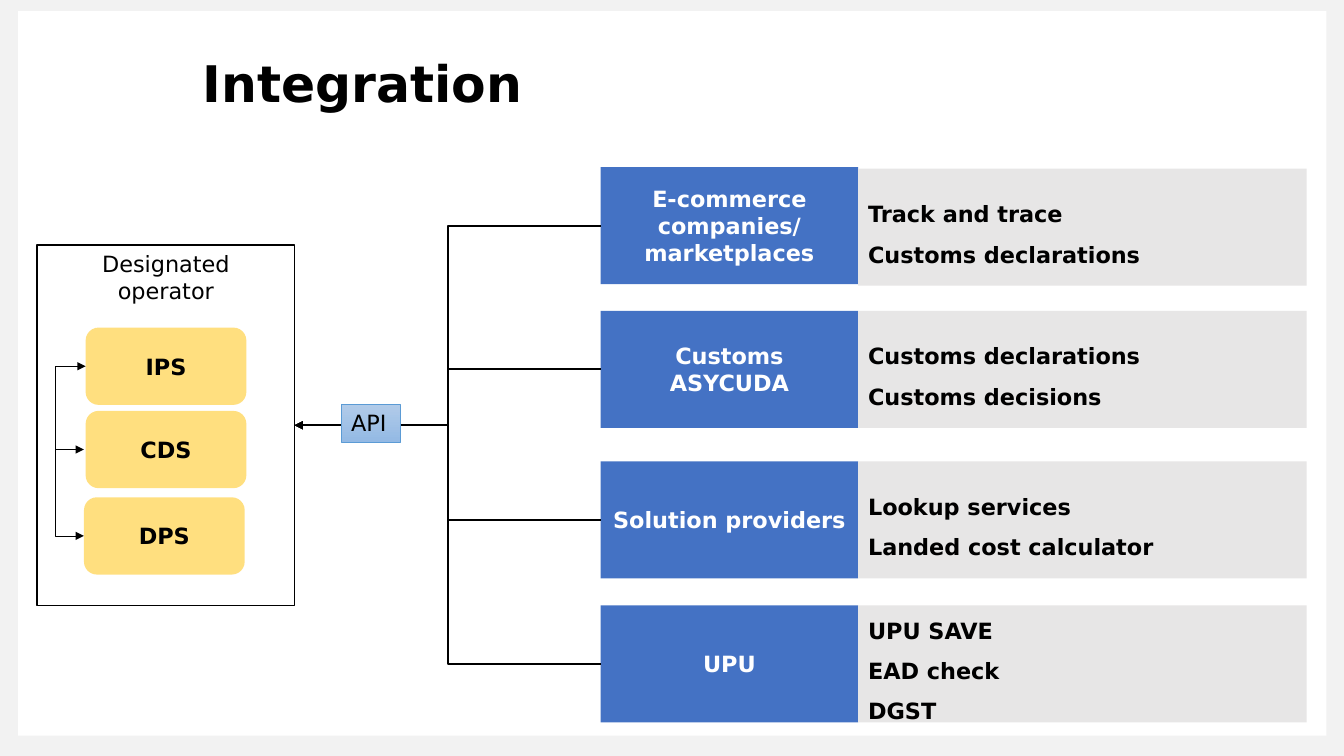
from lxml import etree
from pptx import Presentation
from pptx.dml.color import RGBColor
from pptx.enum import shapes as kinds, text as t
from pptx.oxml import ns
from pptx.util import Pt

BLACK = RGBColor(0x00, 0x00, 0x00)
WHITE = RGBColor(0xFF, 0xFF, 0xFF)
FRAME_GREY = RGBColor(0xF2, 0xF2, 0xF2)
SERVICE_GREY = RGBColor(0xE7, 0xE6, 0xE6)
PARTNER_BLUE = RGBColor(0x44, 0x72, 0xC4)
SYSTEM_AMBER = RGBColor(0xFF, 0xC0, 0x00)
API_LIGHT = RGBColor(0xB1, 0xCB, 0xE9)
API_DARK = RGBColor(0x93, 0xB9, 0xE4)
API_EDGE = RGBColor(0x5B, 0x9B, 0xD5)
FONT = "DejaVu Sans"
RECT = kinds.MSO_SHAPE.RECTANGLE
ELBOW = kinds.MSO_CONNECTOR.ELBOW
CENTER, LEFT = t.PP_ALIGN.CENTER, t.PP_ALIGN.LEFT
LEFT_SITE, RIGHT_SITE = 1, 3

prs = Presentation()
prs.slide_width, prs.slide_height = Pt(960), Pt(540)
slide = prs.slides.add_slide(prs.slide_layouts[5])


def add_box(place, fill, words="", color=BLACK, bold=True, align=CENTER,
            spacing=1.0, kind=RECT):
    """Add a borderless filled shape at (left, top, width, height) points."""
    box = slide.shapes.add_shape(kind, *map(Pt, place))
    box.shadow.inherit = False
    box.fill.solid()
    box.fill.fore_color.rgb = fill
    box.line.fill.background()
    if words:
        frame = box.text_frame
        frame.text = words
        frame.vertical_anchor = t.MSO_ANCHOR.MIDDLE
        for line in frame.paragraphs:
            line.alignment, line.line_spacing = align, spacing
            for run in line.runs:
                run.font.name, run.font.size = FONT, Pt(16)
                run.font.bold, run.font.color.rgb = bold, color
    return box


def add_arrow(kind, ends, width, heads=("tailEnd",)):
    """Add a black connector; ends are x1, y1, x2, y2 in points."""
    arrow = slide.shapes.add_connector(kind, *map(Pt, ends))
    arrow.line.color.rgb = BLACK
    arrow.line.width = Pt(width)
    outline = arrow.line._get_or_add_ln()
    for head in heads:
        etree.SubElement(outline, ns.qn("a:" + head), type="triangle")
    etree.SubElement(arrow._element.spPr, ns.qn("a:effectLst"))
    return arrow


add_box((0, 0, 960, 540), FRAME_GREY)
add_box((13, 8, 934.5, 517.5), WHITE)

# Designated operator and its systems
operator = add_box((26.5, 175, 184, 257.5), WHITE, "Designated\noperator", bold=False)
operator.line.color.rgb = BLACK
operator.line.width = Pt(1)
operator.text_frame.vertical_anchor = t.MSO_ANCHOR.TOP

systems = []
for name, left, top in (("IPS", 61.2, 234), ("CDS", 61.2, 293.5), ("DPS", 60, 355.2)):
    system = add_box((left, top, 114.8, 55.2), SYSTEM_AMBER, name,
                     kind=kinds.MSO_SHAPE.ROUNDED_RECTANGLE)
    amber = system._element.spPr.find(".//" + ns.qn("a:srgbClr"))
    etree.SubElement(amber, ns.qn("a:alpha"), val="50000")
    systems.append(system)

bracket = add_arrow(ELBOW, (61.2, 261.6, 60, 382.8), 0.5, ("headEnd", "tailEnd"))
bracket.begin_connect(systems[0], LEFT_SITE)
bracket.end_connect(systems[2], LEFT_SITE)
# The bend lies 18 connector widths to the left of the start
bend = bracket._element.spPr.find(ns.qn("a:prstGeom")).get_or_add_avLst()
etree.SubElement(bend, ns.qn("a:gd"), name="adj1", fmla="val 1800000")
add_arrow(kinds.MSO_CONNECTOR.STRAIGHT, (39.5, 321.1, 60, 321.1), 0.5)

# Partners, the services each one uses, and their links to the operator
partners = (
    (119.4, 120.5, "E-commerce companies/ marketplaces", "Track and trace\nCustoms declarations"),
    (222, 222, "Customs\nASYCUDA", "Customs declarations\nCustoms decisions"),
    (329.6, 329.6, "Solution providers", "Lookup services\nLanded cost calculator"),
    (432.4, 432.4, "UPU", "UPU SAVE\nEAD check\nDGST"),
)
for top, services_top, name, services in partners:
    partner = add_box((429, top, 184, 83.6), PARTNER_BLUE, name, WHITE)
    add_box((613, services_top, 320.4, 83.6), SERVICE_GREY, services,
            align=LEFT, spacing=1.5)
    link = add_arrow(ELBOW, (429, top + 41.8, 210.5, 303.75), 1.5)
    link.begin_connect(partner, LEFT_SITE)
    link.end_connect(operator, RIGHT_SITE)

api = add_box((243.8, 289, 42.4, 27), API_LIGHT, "API", bold=False, align=LEFT)
api.fill.gradient()
api.fill.gradient_angle = 270
for stop, shade in zip(api.fill.gradient_stops, (API_LIGHT, API_DARK)):
    stop.color.rgb = shade
api.line.color.rgb = API_EDGE
api.line.width = Pt(0.5)
api.text_frame.word_wrap = False
api.text_frame.vertical_anchor = t.MSO_ANCHOR.TOP

# The title goes in front of the white panel
title = slide.shapes.title
slide.shapes._spTree.append(title._element)
title.left, title.top, title.width, title.height = Pt(137.5), Pt(39), Pt(627), Pt(45)
title.text_frame.text = "Integration"
title.text_frame.vertical_anchor = t.MSO_ANCHOR.MIDDLE
heading = title.text_frame.paragraphs[0]
heading.alignment, heading.line_spacing = LEFT, 0.9
heading_font = heading.runs[0].font
heading_font.name, heading_font.size = FONT, Pt(36)
heading_font.bold, heading_font.color.rgb = True, BLACK

prs.save("out.pptx")
